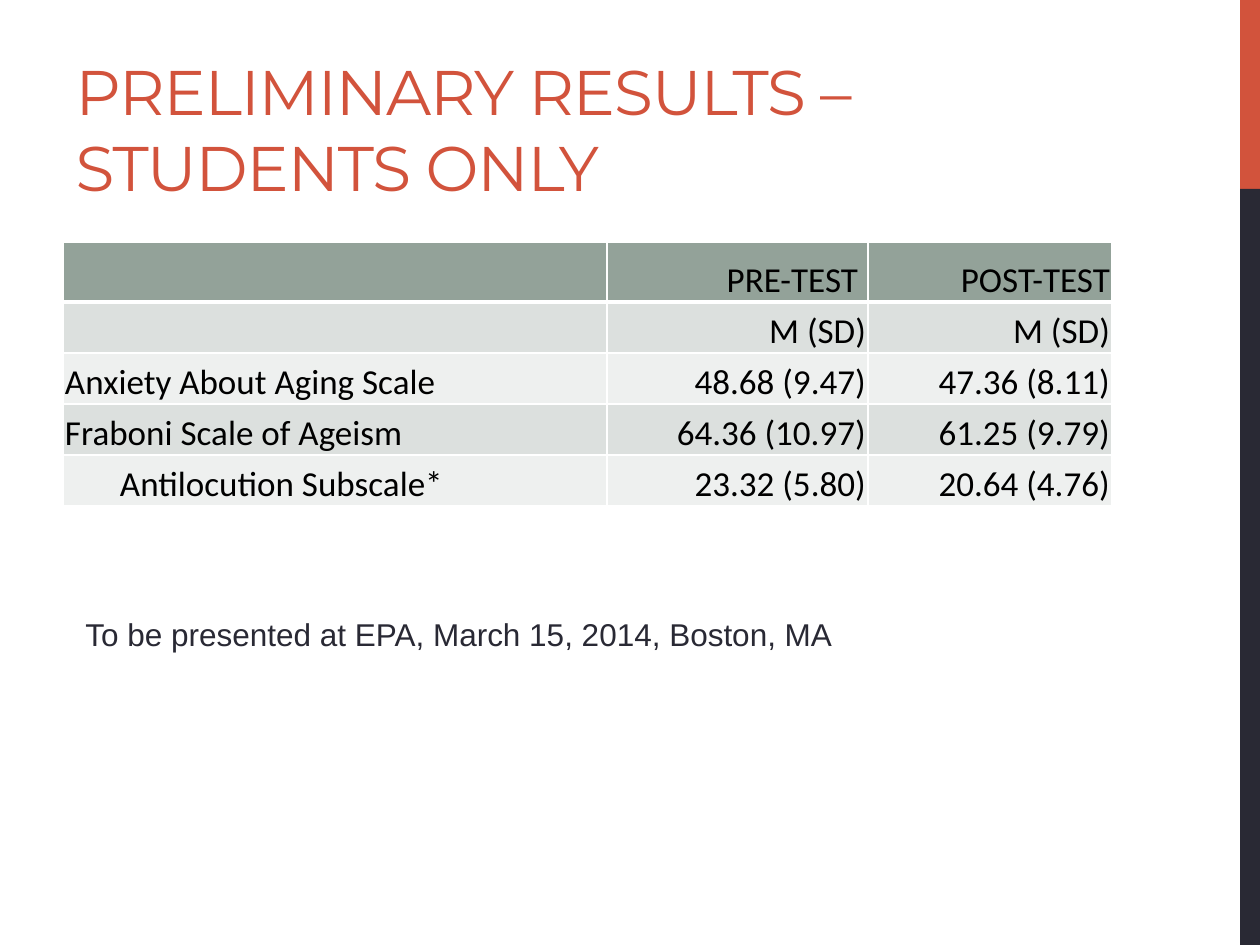
import dataclasses

import pptx
import pptx.dml.color
import pptx.enum.shapes
import pptx.enum.text
import pptx.oxml
import pptx.oxml.ns
import pptx.util

EMU_PER_PX = 914400 / 126
COLORS = {
    "accent": "D2533C",
    "dark": "292934",
    "header": "93A299",
    "band_dark": "DCE0DE",
    "band_light": "EEF0EF",
    "border": "FFFFFF",
    "cell_text": "000000",
}
COLUMN_WIDTHS = [544, 261, 244]
HEADER_HEIGHT, ROW_HEIGHT = 60, 51
CELL_INSET, SUBSCALE_INDENT = 2, 55


@dataclasses.dataclass
class Box:
    left: int
    top: int
    width: int
    height: int

    def emu(self) -> tuple:
        return tuple(px(side) for side in dataclasses.astuple(self))


@dataclasses.dataclass
class ResultRow:
    measure: str
    pre_test: str
    post_test: str
    indent: int = 0


SIDEBAR = [
    (Box(1240, 0, 20, 189), "accent"),
    (Box(1240, 189, 20, 756), "dark"),
]
RESULTS = [
    ResultRow("", "PRE-TEST ", "POST-TEST"),
    ResultRow("", "M (SD)", "M (SD)"),
    ResultRow("Anxiety About Aging Scale", "48.68 (9.47)", "47.36 (8.11)"),
    ResultRow("Fraboni Scale of Ageism", "64.36 (10.97)", "61.25 (9.79)"),
    ResultRow("Antilocution Subscale*", "23.32 (5.80)", "20.64 (4.76)", SUBSCALE_INDENT),
]


def px(length: int) -> int:
    return round(length * EMU_PER_PX)


def rgb(name: str) -> pptx.dml.color.RGBColor:
    return pptx.dml.color.RGBColor.from_string(COLORS[name])


def style_text(paragraph, font_name: str, size: int, color: str) -> None:
    for run in paragraph.runs:
        run.font.name = font_name
        run.font.size = pptx.util.Pt(size)
        run.font.color.rgb = rgb(color)


def add_bar(slide, box: Box, color: str) -> None:
    bar = slide.shapes.add_shape(pptx.enum.shapes.MSO_SHAPE.RECTANGLE, *box.emu())
    bar.shadow.inherit = False
    bar.fill.solid()
    bar.fill.fore_color.rgb = rgb(color)
    bar.line.fill.background()


def set_title(slide, box: Box, text: str) -> None:
    title = slide.shapes.title
    title.left, title.top, title.width, title.height = box.emu()
    frame = title.text_frame
    frame.text = text
    frame.word_wrap = True
    frame.auto_size = pptx.enum.text.MSO_AUTO_SIZE.NONE
    frame.vertical_anchor = pptx.enum.text.MSO_ANCHOR.BOTTOM
    heading = frame.paragraphs[0]
    heading.alignment = pptx.enum.text.PP_ALIGN.LEFT
    style_text(heading, "Montserrat", 36, "accent")
    heading.runs[0].font._element.set("spc", "-60")


def set_borders(cell, bottom_points: int) -> None:
    """Draw all four cell borders, 1 pt wide except for the bottom one."""
    properties = cell._tc.get_or_add_tcPr()
    widths = {"lnL": 1, "lnR": 1, "lnT": 1, "lnB": bottom_points}
    for position, (side, points) in enumerate(widths.items()):
        border = pptx.oxml.parse_xml(
            f'<a:{side} {pptx.oxml.ns.nsdecls("a")} w="{pptx.util.Pt(points)}">'
            f'<a:solidFill><a:srgbClr val="{COLORS["border"]}"/></a:solidFill></a:{side}>'
        )
        properties.insert(position, border)


def fill_cell(cell, text: str, fill: str, is_number: bool, indent: int, bottom_points: int) -> None:
    cell.fill.solid()
    cell.fill.fore_color.rgb = rgb(fill)
    cell.margin_left = px(CELL_INSET + indent)
    cell.margin_right = px(CELL_INSET)
    cell.margin_top, cell.margin_bottom = px(1), 0
    cell.vertical_anchor = pptx.enum.text.MSO_ANCHOR.BOTTOM
    set_borders(cell, bottom_points)
    cell.text_frame.text = text
    paragraph = cell.text_frame.paragraphs[0]
    align = pptx.enum.text.PP_ALIGN
    paragraph.alignment = align.RIGHT if is_number else align.LEFT
    style_text(paragraph, "Calibri", 20, "cell_text")


def add_results_table(slide, left: int, top: int) -> None:
    heights = [HEADER_HEIGHT] + [ROW_HEIGHT] * (len(RESULTS) - 1)
    box = Box(left, top, sum(COLUMN_WIDTHS), sum(heights))
    table = slide.shapes.add_table(len(RESULTS), len(COLUMN_WIDTHS), *box.emu()).table
    for column, width in zip(table.columns, COLUMN_WIDTHS):
        column.width = px(width)
    for row_index, (result, height) in enumerate(zip(RESULTS, heights)):
        table.rows[row_index].height = px(height)
        is_header = row_index == 0
        band = "band_dark" if row_index % 2 else "band_light"
        texts = (result.measure, result.pre_test, result.post_test)
        for column_index, text in enumerate(texts):
            is_number = column_index > 0
            fill_cell(
                table.cell(row_index, column_index),
                text,
                "header" if is_header else band,
                is_number,
                0 if is_number else result.indent,
                3 if is_header else 1,
            )


def add_note(slide, box: Box, text: str) -> None:
    frame = slide.shapes.add_textbox(*box.emu()).text_frame
    frame.word_wrap = True
    frame.auto_size = pptx.enum.text.MSO_AUTO_SIZE.SHAPE_TO_FIT_TEXT
    frame.text = text
    style_text(frame.paragraphs[0], "Arial", 18, "dark")


def main() -> None:
    presentation = pptx.Presentation()
    presentation.slide_width, presentation.slide_height = px(1260), px(945)
    slide = presentation.slides.add_slide(presentation.slide_layouts[5])
    for box, color in SIDEBAR:
        add_bar(slide, box, color)
    set_title(slide, Box(63, 21, 1124, 189), "PRELIMINARY RESULTS – STUDENTS ONLY")
    add_results_table(slide, 63, 242)
    add_note(slide, Box(73, 609, 1040, 50), "To be presented at EPA, March 15, 2014, Boston, MA")
    presentation.save("out.pptx")


if __name__ == "__main__":
    main()
